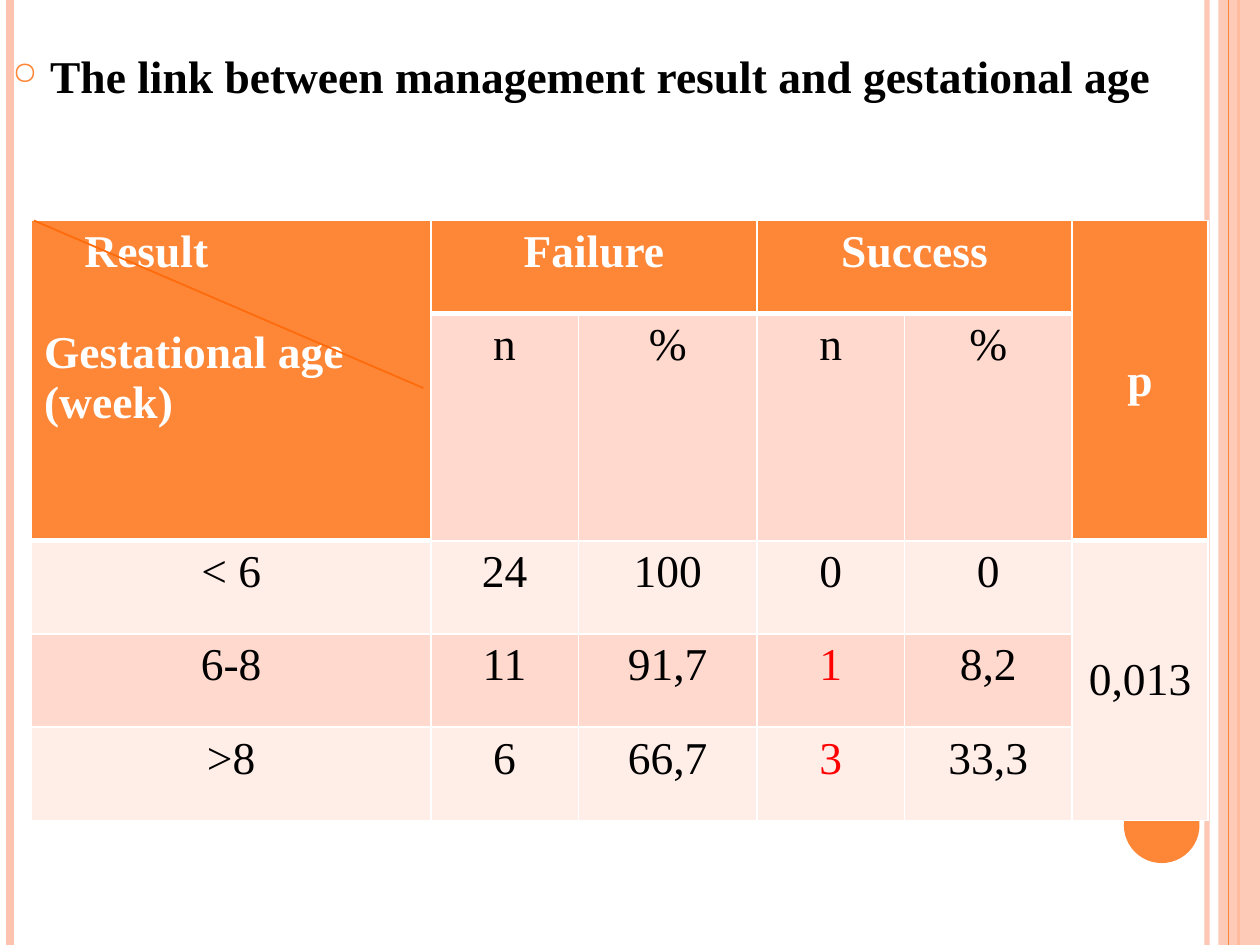
import pptx
import pptx.util
import pptx.dml.color
import pptx.enum.shapes
import pptx.enum.text
import pptx.oxml
import pptx.oxml.ns
import lxml.etree

Inches = pptx.util.Inches
Pt = pptx.util.Pt
RGB = pptx.dml.color.RGBColor
SHAPE = pptx.enum.shapes.MSO_SHAPE
ALIGN = pptx.enum.text.PP_ALIGN
MIDDLE = pptx.enum.text.MSO_ANCHOR.MIDDLE
qn = pptx.oxml.ns.qn

ORANGE = RGB(0xFE, 0x86, 0x37)
DEEP = RGB(0xFF, 0x6B, 0x0A)
PEACH = RGB(0xFE, 0xC3, 0xAE)
ROSE = RGB(0xFF, 0xD9, 0xCE)
PALE = RGB(0xFF, 0xED, 0xE8)
WHITE = RGB(0xFF, 0xFF, 0xFF)
BLACK = RGB(0, 0, 0)
RED = RGB(0xFF, 0, 0)

FONT = "Times New Roman"
COLS = [3.17, 1.17, 1.42, 1.17, 1.33, 1.08]
ROWS = [0.74, 1.69, 0.74, 0.74, 0.74]
CELLS = [
    ["Result\nGestational age (week)", "Failure", "", "Success", "", "p"],
    ["", "n", "%", "n", "%", ""],
    ["< 6", "24", "100", "0", "0", "0,013"],
    ["6-8", "11", "91,7", "1", "8,2", ""],
    [">8", "6", "66,7", "3", "33,3", ""],
]
SPANS = [(0, 0, 1, 0), (0, 1, 0, 2), (0, 3, 0, 4), (0, 5, 1, 5), (2, 5, 4, 5)]
ALERTS = [(3, 3), (4, 3)]


def add(node, tag, **attrs):
    child = lxml.etree.SubElement(node, qn(tag))
    for key, value in attrs.items():
        child.set(key, str(value))
    return child


def fade(shape, share):
    for color in shape._element.spPr.iter(qn("a:srgbClr")):
        add(color, "a:alpha", val=share * 1000)


def style(font, color, bold):
    font.name, font.size, font.bold = FONT, Pt(26), bold
    font.color.rgb = color


def line(slide, start, end, color, width):
    rule = slide.shapes.add_connector(
        pptx.enum.shapes.MSO_CONNECTOR.STRAIGHT,
        *(Inches(n) for n in (*start, *end)))
    rule.line.color.rgb = color
    rule.line.width = Pt(width)
    add(rule._element.spPr, "a:effectLst")
    return rule


def block(slide, kind, box, color):
    shape = slide.shapes.add_shape(kind, *(Inches(n) for n in box))
    shape.shadow.inherit = False
    shape.fill.solid()
    shape.fill.fore_color.rgb = color
    shape.line.fill.background()
    return shape


def frame(slide, box):
    left, top, width, height = box
    right, base = left + width, top + height

    def post(x, color, weight):
        return line(slide, (x, top), (x, base), color, weight)

    fade(post(right - 0.42, PEACH, 3), 93)
    post(left + 0.08, PEACH, 4.5)
    post(right - 0.17, ORANGE, 1.5)
    fade(block(slide, SHAPE.RECTANGLE, (right - 0.33, top, 0.33, height), PEACH), 87)
    post(right - 0.25, ORANGE, 0.75)
    block(slide, SHAPE.OVAL, (right - 1.08, base - 1.25, 0.6, 0.6), ORANGE)


def title(slide, box):
    text = slide.shapes.add_textbox(*(Inches(n) for n in box)).text_frame
    text.word_wrap = True
    para = text.paragraphs[0]
    para.text = "The link between management result and gestational age"
    para.space_before = Pt(6)
    style(para.font, BLACK, True)
    props = para._p.get_or_add_pPr()
    props.set("marL", str(Inches(0.3)))
    props.set("indent", str(Inches(-0.3)))
    tint = add(props, "a:buClr")
    add(tint, "a:srgbClr", val=ORANGE)
    add(props, "a:buSzPct", val=70000)
    add(props, "a:buChar", char="○")


def is_head(row, col):
    return row == 0 or row == 1 and col in (0, 5)


def borders(cell, row, col):
    head = is_head(row, col)
    under = row > 0 and is_head(row - 1, col) and not head
    sides = {"L": 1, "R": 1, "T": 3 if under else 1, "B": 3 if head else 1}
    props = cell._tc.get_or_add_tcPr()
    for side, width in sides.items():
        edge = add(props, "a:ln" + side, w=Pt(width))
        fill = add(edge, "a:solidFill")
        add(fill, "a:srgbClr", val=WHITE)


def paint(cell, row, col):
    head = is_head(row, col)
    borders(cell, row, col)
    cell.fill.solid()
    cell.fill.fore_color.rgb = ORANGE if head else ROSE if row % 2 else PALE
    cell.text = CELLS[row][col]
    color = WHITE if head else RED if (row, col) in ALERTS else BLACK
    for para in cell.text_frame.paragraphs:
        para.alignment = ALIGN.CENTER
        style(para.font, color, head)
    if col == 5:
        cell.vertical_anchor = MIDDLE


def grid(slide, box):
    left, top, width, height = box
    table = slide.shapes.add_table(
        len(ROWS), len(COLS), *(Inches(n) for n in box)).table
    for col, size in zip(table.columns, COLS):
        col.width = Inches(size)
    for row, size in zip(table.rows, ROWS):
        row.height = Inches(size)
    for r in range(len(ROWS)):
        for c in range(len(COLS)):
            paint(table.cell(r, c), r, c)
    for r, c, last, end in SPANS:
        table.cell(r, c).merge(table.cell(last, end))
    upper, lower = table.cell(0, 0).text_frame.paragraphs
    upper.alignment = lower.alignment = ALIGN.LEFT
    upper._p.get_or_add_pPr().set("marL", str(Inches(0.32)))
    lower.space_before = Pt(29)
    line(slide, (left + 0.02, top), (left + 3.11, top + 1.33), DEEP, 1)


def main():
    deck = pptx.Presentation()
    deck.slide_width, deck.slide_height = Inches(10), Inches(7.5)
    slide = deck.slides.add_slide(deck.slide_layouts[6])
    frame(slide, (0, 0, 10, 7.5))
    title(slide, (0, 0.33, 9.58, 6.75))
    grid(slide, (0.25, 1.75, sum(COLS), sum(ROWS)))
    deck.save("out.pptx")


if __name__ == "__main__":
    main()
